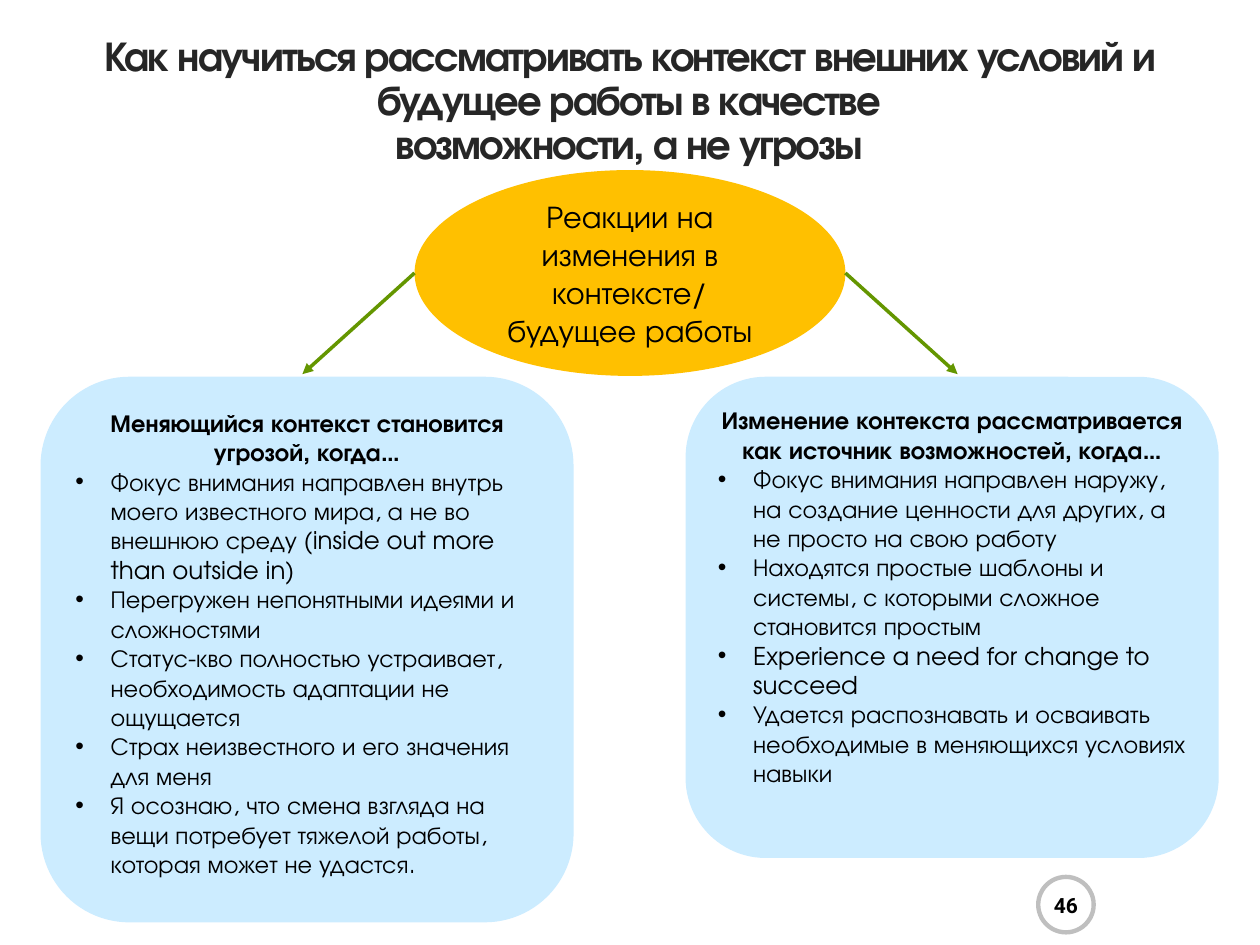
from dataclasses import dataclass

from pptx import Presentation
from pptx.dml.color import RGBColor
from pptx.enum import shapes, text
from pptx.oxml import ns, xmlchemy
from pptx.util import Pt

FONT = "TeX Gyre Adventor"
BLACK = RGBColor(0, 0, 0)
WHITE = RGBColor(0xFF, 0xFF, 0xFF)
TITLE_COLOR = RGBColor(0x26, 0x26, 0x26)
PANEL_BLUE = RGBColor(0xCC, 0xEC, 0xFF)
AMBER = RGBColor(0xFF, 0xC0, 0x00)
ARROW_GREEN = RGBColor(0x64, 0x96, 0x00)
RING_GREY = RGBColor(0xBF, 0xBF, 0xBF)

PANEL_TOP, PANEL_WIDTH = 215.3, 304.6
INDENT = 20.2
TITLE = ("Как научиться рассматривать контекст внешних условий и будущее работы "
         "в качестве\vвозможности, а не угрозы")


@dataclass
class Panel:
    left: float
    height: float
    heading: str
    bullets: list[str]


@dataclass
class Arrow:
    start_x: float
    end_x: float


PANELS = [
    Panel(23.2, 311.8, "Меняющийся контекст становится угрозой, когда…", [
        "Фокус внимания направлен внутрь моего известного мира, а не во внешнюю среду "
        "(inside out more than outside in)",
        "Перегружен непонятными идеями и сложностями",
        "Статус-кво полностью устраивает, необходимость адаптации не ощущается",
        "Страх неизвестного и его значения для меня",
        "Я осознаю, что смена взгляда на вещи потребует тяжелой работы, "
        "которая может не удастся.",
    ]),
    Panel(391.8, 275, "Изменение контекста рассматривается как источник возможностей, когда…", [
        "Фокус внимания направлен наружу, на создание ценности для других, "
        "а не просто на свою работу",
        "Находятся простые шаблоны и системы, с которыми сложное становится простым",
        "Experience a need for change to succeed",
        "Удается распознавать и осваивать необходимые в меняющихся условиях навыки",
    ]),
]
ARROWS = [Arrow(236.9, 172.8), Arrow(483.1, 547.2)]


def set_font(p, size: float, color: RGBColor = BLACK, bold: bool = False,
             name: str = FONT) -> None:
    for r in p.runs:
        r.font.name, r.font.size, r.font.bold = name, Pt(size), bold
        r.font.color.rgb = color


def set_margins(tf, x: float, y: float) -> None:
    tf.margin_left = tf.margin_right = Pt(x)
    tf.margin_top = tf.margin_bottom = Pt(y)


def add_filled(s, kind, left: float, top: float, width: float, height: float,
               color: RGBColor):
    sp = s.shapes.add_shape(kind, Pt(left), Pt(top), Pt(width), Pt(height))
    sp.shadow.inherit = False
    sp.fill.solid()
    sp.fill.fore_color.rgb = color
    sp.line.fill.background()
    sp.text_frame.word_wrap = True
    return sp


def make_bullet(p) -> None:
    p_pr = p._p.get_or_add_pPr()
    p_pr.set("marL", str(Pt(INDENT)))
    p_pr.set("indent", str(-Pt(INDENT)))
    font = xmlchemy.OxmlElement("a:buFont")
    font.set("typeface", "Arial")
    char = xmlchemy.OxmlElement("a:buChar")
    char.set("char", "•")
    p_pr.extend([font, char])


def set_title(s) -> None:
    sp = s.shapes.title
    sp.left, sp.top, sp.width, sp.height = Pt(51.8), Pt(30.2), Pt(615.6), Pt(56.2)
    tf = sp.text_frame
    tf.text = TITLE
    tf.word_wrap = True
    tf.auto_size = text.MSO_AUTO_SIZE.NONE
    tf.vertical_anchor = text.MSO_ANCHOR.MIDDLE
    p = tf.paragraphs[0]
    p.alignment = text.PP_ALIGN.CENTER
    p.line_spacing = Pt(25.1)
    set_font(p, 24, TITLE_COLOR, bold=True)
    for r in p.runs:
        r.font._element.set("spc", "-110")


def add_panel(s, panel: Panel) -> None:
    sp = add_filled(s, shapes.MSO_SHAPE.ROUNDED_RECTANGLE, panel.left, PANEL_TOP,
                    PANEL_WIDTH, panel.height, PANEL_BLUE)
    tf = sp.text_frame
    set_margins(tf, 5, 2.9)
    tf.vertical_anchor = text.MSO_ANCHOR.TOP
    tf.text = "\n".join([panel.heading, *panel.bullets])
    heading, *bullets = tf.paragraphs
    heading.alignment = text.PP_ALIGN.CENTER
    set_font(heading, 14, bold=True)
    for p in bullets:
        p.alignment = text.PP_ALIGN.LEFT
        make_bullet(p)
        set_font(p, 14)


def add_topic(s) -> None:
    sp = add_filled(s, shapes.MSO_SHAPE.OVAL, 236.9, 97.2, 246.2, 117.6, AMBER)
    tf = sp.text_frame
    tf.vertical_anchor = text.MSO_ANCHOR.MIDDLE
    tf.text = "Реакции на изменения в контексте/\nбудущее работы"
    for p in tf.paragraphs:
        p.alignment = text.PP_ALIGN.CENTER
        set_font(p, 18)


def add_arrow(s, arrow: Arrow) -> None:
    line = s.shapes.add_connector(shapes.MSO_CONNECTOR.STRAIGHT, Pt(arrow.start_x), Pt(156),
                                  Pt(arrow.end_x), Pt(213.8))
    line.line.color.rgb = ARROW_GREEN
    line.line.width = Pt(2)
    tail = xmlchemy.OxmlElement("a:tailEnd")
    tail.set("type", "triangle")
    sp_pr = line._element.spPr
    sp_pr.find(ns.qn("a:ln")).append(tail)
    sp_pr.append(xmlchemy.OxmlElement("a:effectLst"))


def add_page_number(s) -> None:
    ring = add_filled(s, shapes.MSO_SHAPE.OVAL, 593.3, 501.1, 31.7, 31.7, WHITE)
    ring.line.color.rgb = RING_GREY
    ring.line.width = Pt(2.5)
    tf = s.shapes.add_textbox(Pt(594), Pt(504), Pt(30.2), Pt(25.9)).text_frame
    tf.word_wrap = True
    set_margins(tf, 0, 0)
    tf.vertical_anchor = text.MSO_ANCHOR.MIDDLE
    tf.text = "46"
    p = tf.paragraphs[0]
    p.alignment = text.PP_ALIGN.CENTER
    set_font(p, 12, bold=True, name="Roboto")


def main() -> None:
    prs = Presentation()
    prs.slide_width, prs.slide_height = Pt(720), Pt(540)
    s = prs.slides.add_slide(prs.slide_layouts.get_by_name("Title Only"))
    s.background.fill.solid()
    s.background.fill.fore_color.rgb = WHITE
    add_page_number(s)
    set_title(s)
    for panel in PANELS:
        add_panel(s, panel)
    add_topic(s)
    for arrow in ARROWS:
        add_arrow(s, arrow)
    prs.save("out.pptx")


if __name__ == "__main__":
    main()
